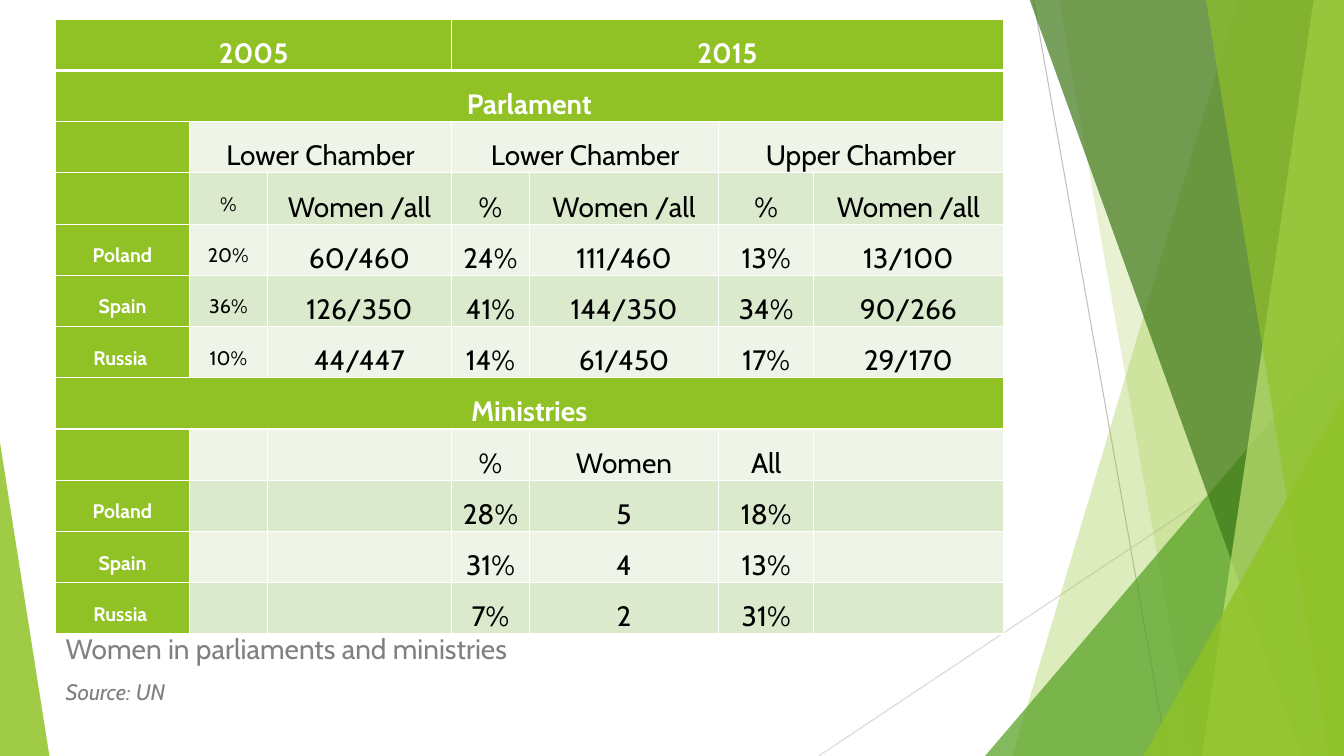
from lxml import etree
from pptx import Presentation
from pptx import util as u
from pptx.dml.color import RGBColor
from pptx.enum import shapes, text
from pptx.oxml.ns import qn

GREEN, PALE, LIGHT, WHITE, BLACK, GREY = "90C226", "EEF4E8", "DBE9CD", "FFFFFF", "000000", "808080"


def color(value):
    return RGBColor.from_string(value)


class Deck:
    font = "Cabin"

    def __init__(self, prs):
        self.slide = prs.slides.add_slide(prs.slide_layouts[5])
        self.shapes = self.slide.shapes

    def format(self, p, size, hue, bold=False, italic=False):
        for r in p.runs:
            r.font.name = self.font
            r.font.size = u.Pt(size)
            r.font.bold = bold
            r.font.italic = italic
            r.font.color.rgb = color(hue)

    def paint(self, sp, hue, alpha):
        sp.shadow.inherit = False
        sp.line.fill.background()
        sp.fill.solid()
        sp.fill.fore_color.rgb = color(hue)
        node = sp._element.spPr.find(qn("a:solidFill"))[0]
        etree.SubElement(node, qn("a:alpha")).set("val", str(alpha * 1000))

    def line(self, x1, y1, x2, y2, hue):
        sp = self.shapes.add_connector(
            shapes.MSO_CONNECTOR.STRAIGHT, *map(u.Inches, (x1, y1, x2, y2)))
        sp.line.color.rgb = color(hue)
        sp.line.width = u.Pt(0.75)
        etree.SubElement(sp._element.spPr, qn("a:effectLst"))

    def shard(self, top_left, bottom_left, hue, alpha):
        corners = [(top_left, -0.01), (13.33, -0.01), (13.33, 7.5), (bottom_left, 7.5)]
        points = [(u.Inches(x), u.Inches(y)) for x, y in corners]
        fb = self.shapes.build_freeform(*points[0])
        fb.add_line_segments(points[1:], close=True)
        self.paint(fb.convert_to_shape(), hue, alpha)

    def triangle(self, x, y, w, h, apex, hue, alpha):
        sp = self.shapes.add_shape(
            shapes.MSO_SHAPE.ISOSCELES_TRIANGLE, *map(u.Inches, (x, y, w, h)))
        sp.adjustments[0] = apex
        self.paint(sp, hue, alpha)

    def caption(self, x, y, w, h, lines):
        sp = self.shapes.title
        sp.left, sp.top, sp.width, sp.height = map(u.Inches, (x, y, w, h))
        tf = sp.text_frame
        tf.text = "\n".join(line for line, _, _ in lines)
        tf.word_wrap = True
        tf.auto_size = text.MSO_AUTO_SIZE.NONE
        tf.vertical_anchor = text.MSO_ANCHOR.TOP
        for p, (_, size, italic) in zip(tf.paragraphs, lines):
            p.alignment = text.PP_ALIGN.LEFT
            p.space_before = u.Pt(10)
            self.format(p, size, GREY, italic=italic)

    def border(self, cell, side, width):
        ln = etree.SubElement(cell._tc.get_or_add_tcPr(), qn(f"a:ln{side}"))
        ln.set("w", str(u.Pt(width)))
        fill = etree.SubElement(ln, qn("a:solidFill"))
        etree.SubElement(fill, qn("a:srgbClr")).set("val", WHITE)

    def cell(self, cell, value, fill, size, hue, bold, top, bottom):
        for side, width in zip("LRTB", (1, 1, top, bottom)):
            self.border(cell, side, width)
        cell.fill.solid()
        cell.fill.fore_color.rgb = color(fill)
        cell.margin_left = cell.margin_right = u.Inches(0.07)
        cell.margin_top = cell.margin_bottom = 0
        cell.vertical_anchor = text.MSO_ANCHOR.MIDDLE
        cell.text = value
        p = cell.text_frame.paragraphs[0]
        p.alignment = text.PP_ALIGN.CENTER
        p.line_spacing = 1.5
        p.space_before = u.Pt(6)
        self.format(p, size, hue, bold)

    def table(self, x, y, w, h, widths, rows, bands, merges):
        tbl = self.shapes.add_table(
            len(rows), len(widths), *map(u.Inches, (x, y, w, h))).table
        for col, width in zip(tbl.columns, widths):
            col.width = u.Inches(width)
        for i, row in enumerate(rows):
            for j, value in enumerate(row):
                band = i in bands
                head = band or j == 0
                fill = GREEN if head else LIGHT if i % 2 else PALE
                small = i > 2 and j < 2 and not band
                self.cell(tbl.cell(i, j), value, fill, 14 if small else 20,
                          WHITE if head else BLACK, head,
                          3 if i == 1 else 1, 3 if i == 0 else 1)
        for i, first, last in merges:
            tbl.cell(i, first).merge(tbl.cell(i, last))


def main():
    prs = Presentation()
    prs.slide_width, prs.slide_height = u.Inches(13.33), u.Inches(7.5)
    s = Deck(prs)

    s.line(10.25, 0, 11.58, 7.5, "BFBFBF")
    s.line(13.33, 4.03, 8.12, 7.5, "D9D9D9")
    s.shard(12.28, 10.04, GREEN, 30)
    s.shard(10.5, 11.83, GREEN, 20)
    s.triangle(9.77, 3.33, 3.56, 4.17, 1, "54A021", 72)
    s.shard(10.21, 12.91, "3F7819", 70)
    s.shard(13.03, 11.92, "C0E474", 70)
    s.shard(11.96, 13.18, GREEN, 65)
    s.triangle(11.34, 3.93, 1.99, 3.57, 1, GREEN, 80)
    s.triangle(0, 4.39, 0.49, 3.11, 0, GREEN, 85)

    s.caption(0.55, 6.21, 9.4, 0.94, [
        ("Women in parliaments and ministries", 20, False),
        ("Source: UN", 16, True),
    ])

    rows = [
        ["2005", "", "", "2015", "", "", ""],
        ["Parlament", "", "", "", "", "", ""],
        ["", "Lower Chamber", "", "Lower Chamber", "", "Upper Chamber", ""],
        ["", "%", "Women /all", "%", "Women /all", "%", "Women /all"],
        ["Poland", "20%", "60/460", "24%", "111/460", "13%", "13/100"],
        ["Spain", "36%", "126/350", "41%", "144/350", "34%", "90/266"],
        ["Russia ", "10%", "44/447", "14%", "61/450", "17%", "29/170"],
        ["Ministries", "", "", "", "", "", ""],
        ["", "", "", "%", "Women", "All", ""],
        ["Poland", "", "", "28%", "5", "18%", ""],
        ["Spain", "", "", "31%", "4", "13%", ""],
        ["Russia ", "", "", "7%", "2", "31%", ""],
    ]
    merges = [(0, 0, 2), (0, 3, 6), (1, 0, 6), (2, 1, 2), (2, 3, 4), (2, 5, 6), (7, 0, 6)]
    s.table(0.55, 0.19, 9.4, 5.94, [1.33, 0.77, 1.83, 0.77, 1.88, 0.94, 1.88],
            rows, {0, 1, 7}, merges)

    prs.save("out.pptx")


if __name__ == "__main__":
    main()
